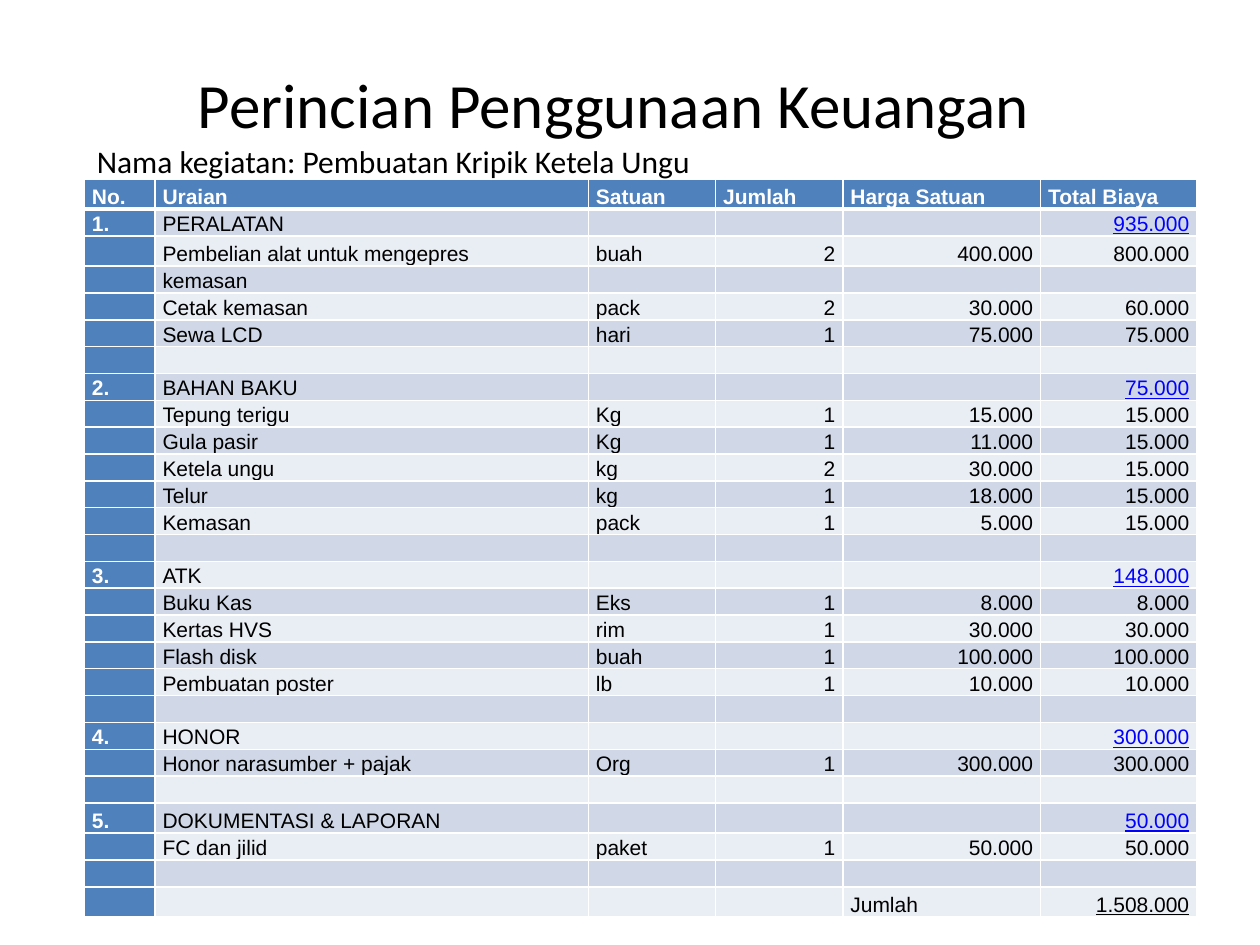
from dataclasses import dataclass

from lxml.etree import SubElement
from pptx import Presentation
from pptx.dml.color import RGBColor
from pptx.enum.text import MSO_ANCHOR, PP_ALIGN
from pptx.oxml.ns import qn
from pptx.util import Inches, Pt

SLIDE_WIDTH, SLIDE_HEIGHT = Inches(10), Inches(7.5)
GRID_COLUMNS, GRID_ROWS = 100, 75
COLORS = {
    "black": "000000",
    "white": "FFFFFF",
    "header": "4F81BD",
    "odd": "D0D8E8",
    "even": "E9EDF4",
    "subtotal": "0000FF",
}
HEADINGS = ("No.", "Uraian", "Satuan", "Jumlah", "Harga Satuan", "Total Biaya")
COLUMN_SPANS = (5.6, 34.4, 10.1, 10.1, 15.7, 12.4)
ROW_SPAN, TALL_ROW_SPAN = 2.13, 2.4
FIRST_NUMBER_COLUMN, PRICE_COLUMN, TOTAL_COLUMN = 3, 4, 5


@dataclass(frozen=True)
class Area:
    column: float
    row: float
    columns: float
    rows: float

    def lengths(self) -> tuple[int, int, int, int]:
        return across(self.column), down(self.row), across(self.columns), down(self.rows)


@dataclass(frozen=True)
class Item:
    name: str
    unit: str = ""
    amount: str = ""
    price: str = ""
    total: str = ""
    tall: bool = False


@dataclass(frozen=True)
class Section:
    name: str
    subtotal: str
    items: tuple[Item, ...]
    tall: bool = False


@dataclass(frozen=True)
class Line:
    texts: tuple[str, ...]
    tall: bool = False
    is_section: bool = False
    is_sum: bool = False


TITLE_AREA = Area(5.8, 3.2, 85.8, 10)
ACTIVITY_AREA = Area(6.7, 10.8, 88.3, 4)
BUDGET_AREA = Area(6.7, 14.2, 88.3, 58.6)
SECTIONS = (
    Section("PERALATAN", "935.000", (
        Item("Pembelian alat untuk mengepres", "buah", "2", "400.000", "800.000", tall=True),
        Item("kemasan"),
        Item("Cetak kemasan", "pack", "2", "30.000", "60.000"),
        Item("Sewa LCD", "hari", "1", "75.000", "75.000"),
    )),
    Section("BAHAN BAKU", "75.000", (
        Item("Tepung terigu", "Kg", "1", "15.000", "15.000"),
        Item("Gula pasir", "Kg", "1", "11.000", "15.000"),
        Item("Ketela ungu", "kg", "2", "30.000", "15.000"),
        Item("Telur", "kg", "1", "18.000", "15.000"),
        Item("Kemasan", "pack", "1", "5.000", "15.000"),
    )),
    Section("ATK", "148.000", (
        Item("Buku Kas", "Eks", "1", "8.000", "8.000"),
        Item("Kertas HVS", "rim", "1", "30.000", "30.000"),
        Item("Flash disk", "buah", "1", "100.000", "100.000"),
        Item("Pembuatan poster", "lb", "1", "10.000", "10.000"),
    )),
    Section("HONOR", "300.000", (
        Item("Honor narasumber + pajak", "Org", "1", "300.000", "300.000"),
    )),
    Section("DOKUMENTASI & LAPORAN", "50.000", (
        Item("FC dan jilid", "paket", "1", "50.000", "50.000"),
    ), tall=True),
)


def across(columns: float) -> int:
    return round(SLIDE_WIDTH * columns / GRID_COLUMNS)


def down(rows: float) -> int:
    return round(SLIDE_HEIGHT * rows / GRID_ROWS)


def write(frame, text: str, *, font="Calibri", size=12, color="black", bold=False,
          underline=False, align=PP_ALIGN.LEFT, spacing=1.0) -> None:
    paragraph = frame.paragraphs[0]
    paragraph.alignment = align
    paragraph.line_spacing = spacing
    if not text:
        SubElement(paragraph._p, qn("a:endParaRPr"), sz=str(size * 100))
        return
    run = paragraph.add_run()
    run.text = text
    run.font.name = font
    run.font.size = Pt(size)
    run.font.bold = bold
    run.font.underline = underline
    run.font.color.rgb = RGBColor.from_string(COLORS[color])


def budget_lines() -> list[Line]:
    lines = [Line(HEADINGS, tall=True)]
    for number, section in enumerate(SECTIONS, 1):
        lines.append(Line((f"{number}.", section.name, "", "", "", section.subtotal),
                          section.tall, is_section=True))
        lines.extend(Line(("", item.name, item.unit, item.amount, item.price, item.total),
                          item.tall) for item in section.items)
        lines.append(Line(("",) * len(HEADINGS)))
    lines.append(Line(("", "", "", "", "Jumlah", "1.508.000"), tall=True, is_sum=True))
    return lines


def draw_borders(cell, row: int) -> None:
    widths = {"L": 1, "R": 1, "T": 3 if row == 1 else 1, "B": 3 if row == 0 else 1}
    for side, width in widths.items():
        border = SubElement(cell._tc.get_or_add_tcPr(), qn(f"a:ln{side}"), w=str(Pt(width)))
        SubElement(SubElement(border, qn("a:solidFill")), qn("a:srgbClr"), val=COLORS["white"])


def draw_cell(cell, line: Line, row: int, column: int) -> None:
    is_heading = row == 0 or column == 0
    is_subtotal = line.is_section and column == TOTAL_COLUMN
    is_number = row > 0 and column >= FIRST_NUMBER_COLUMN
    is_sum_label = line.is_sum and column == PRICE_COLUMN
    draw_borders(cell, row)
    cell.fill.solid()
    band = "odd" if row % 2 else "even"
    cell.fill.fore_color.rgb = RGBColor.from_string(COLORS["header" if is_heading else band])
    cell.vertical_anchor = MSO_ANCHOR.BOTTOM
    cell.margin_left = cell.margin_right = Inches(0.06)
    cell.margin_top = cell.margin_bottom = 0
    write(cell.text_frame, line.texts[column], font="Arial", bold=is_heading, spacing=1.07,
          color="white" if is_heading else "subtotal" if is_subtotal else "black",
          underline=is_subtotal or (line.is_sum and column == TOTAL_COLUMN),
          align=PP_ALIGN.RIGHT if is_number and not is_sum_label else PP_ALIGN.LEFT)


def draw_budget(slide) -> None:
    lines = budget_lines()
    budget = slide.shapes.add_table(len(lines), len(HEADINGS), *BUDGET_AREA.lengths()).table
    budget.first_col = True
    for column, span in enumerate(COLUMN_SPANS):
        budget.columns[column].width = across(span)
    for row, line in enumerate(lines):
        budget.rows[row].height = down(TALL_ROW_SPAN if line.tall else ROW_SPAN)
        for column in range(len(HEADINGS)):
            draw_cell(budget.cell(row, column), line, row, column)


def main() -> None:
    deck = Presentation()
    deck.slide_width, deck.slide_height = SLIDE_WIDTH, SLIDE_HEIGHT
    slide = deck.slides.add_slide(deck.slide_layouts[5])
    heading = slide.shapes.title
    heading.left, heading.top, heading.width, heading.height = TITLE_AREA.lengths()
    heading.text_frame.vertical_anchor = MSO_ANCHOR.MIDDLE
    write(heading.text_frame, "Perincian Penggunaan Keuangan", size=36, align=PP_ALIGN.CENTER)
    draw_budget(slide)
    activity = slide.shapes.add_textbox(*ACTIVITY_AREA.lengths()).text_frame
    activity.word_wrap = True
    activity.vertical_anchor = MSO_ANCHOR.MIDDLE
    write(activity, "Nama kegiatan: Pembuatan Kripik Ketela Ungu", size=18)
    deck.save("out.pptx")


if __name__ == "__main__":
    main()
